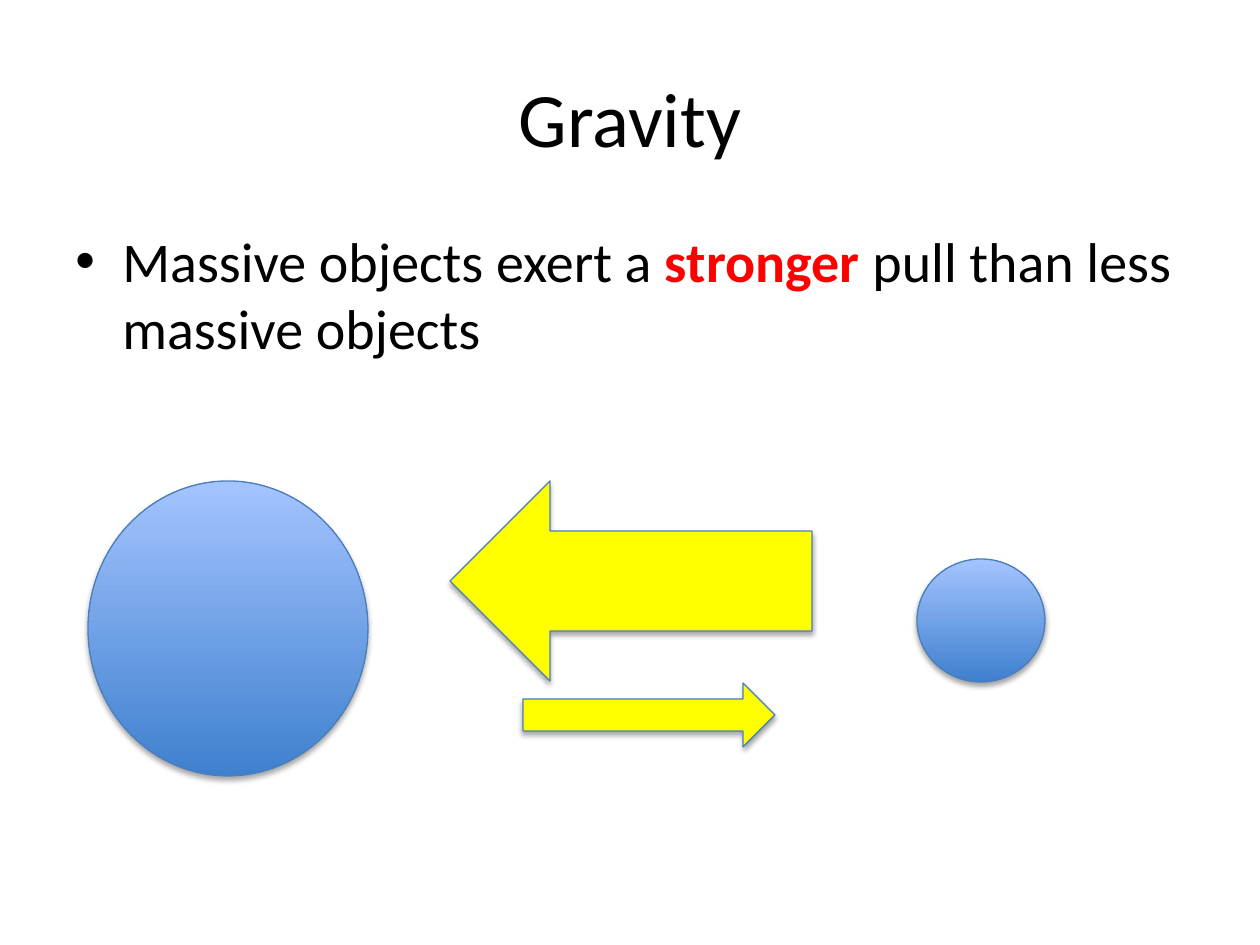
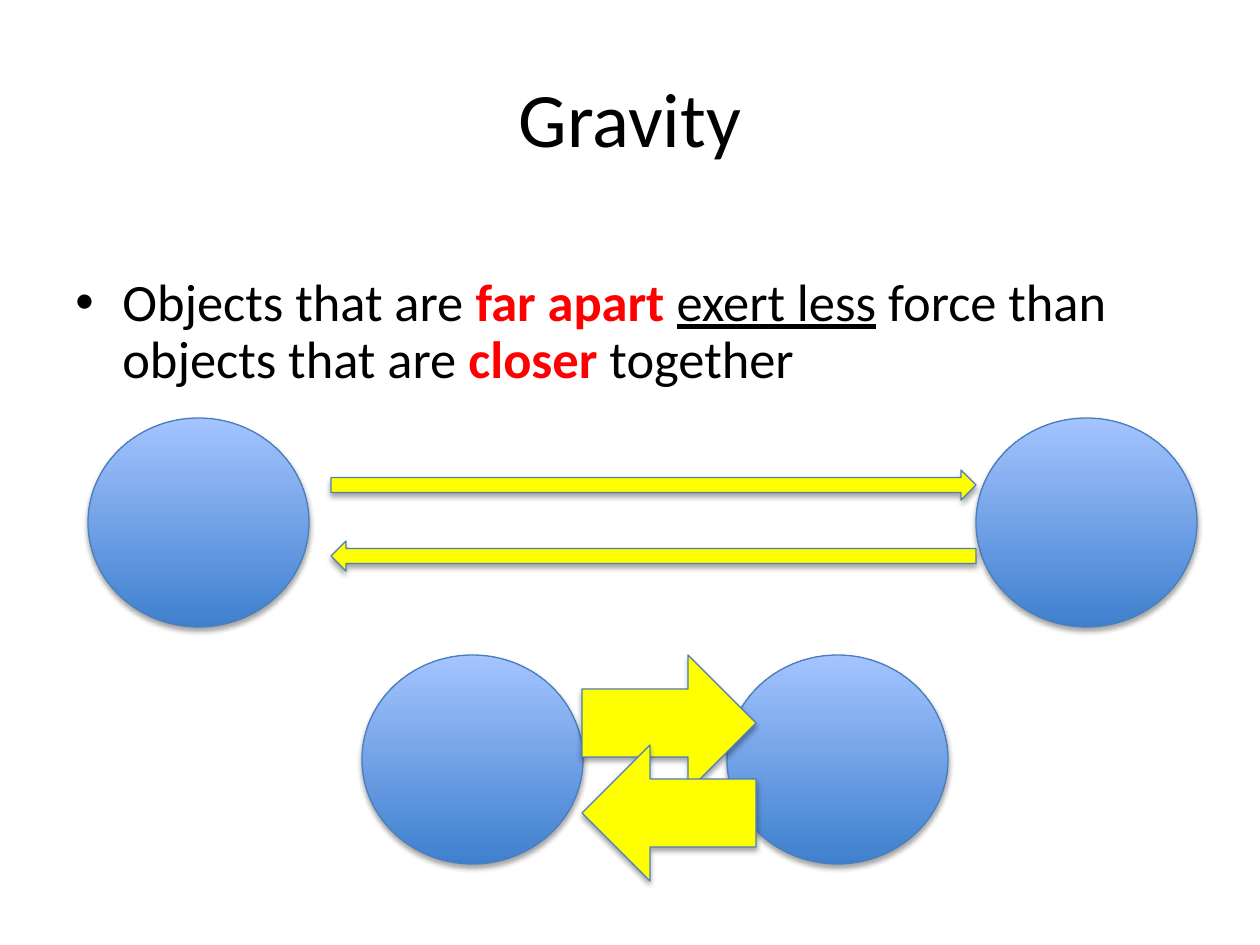
"""Build two slides on how mass and distance change the pull of gravity."""
from dataclasses import dataclass

from lxml.etree import SubElement
from pptx import Presentation
from pptx.dml.color import RGBColor
from pptx.enum.shapes import MSO_SHAPE
from pptx.enum.text import MSO_ANCHOR, PP_ALIGN
from pptx.oxml.ns import qn
from pptx.util import Emu, Pt


@dataclass(frozen=True)
class Theme:
    font: str = "Calibri"
    title_size: int = 44
    text: str = "000000"
    accent: str = "FF0000"
    ball_low: str = "3F80CE"
    ball_high: str = "A4C4FF"
    arrow: str = "FFFF00"
    outline: str = "4B7EBC"
    shadow: str = "000000"


THEME = Theme()
SCALE = 914400 / 126
WIDTH, HEIGHT = 1260, 945
MARGIN, INDENT = 63, 47
BALL, LEFT, RIGHT = MSO_SHAPE.OVAL, MSO_SHAPE.LEFT_ARROW, MSO_SHAPE.RIGHT_ARROW


def px(n):
    return Emu(round(n * SCALE))


def style_run(r, size, color, bold=False, underline=False):
    r.font.name, r.font.size = THEME.font, Pt(size)
    r.font.bold, r.font.underline = bold, underline
    r.font.color.rgb = RGBColor.from_string(color)


far_y, near_y = 418, 655
ball_w, ball_h = 221, 209
slides = [
    {
        "top": 220, "height": 194, "size": 32, "spacing": 1.0,
        "runs": [("Massive objects exert a ", ""), ("stronger ", "key"),
                 ("pull than less massive objects", "")],
        "shapes": [(BALL, 88, 481, 280, 295, 0), (LEFT, 450, 481, 362, 200, 0),
                   (RIGHT, 523, 683, 252, 64, 0), (BALL, 917, 559, 128, 123, 0)],
    },
    {
        "top": 270, "height": 127, "size": 30, "spacing": 0.9,
        "runs": [("Objects that are ", ""), ("far apart ", "key"),
                 ("exert less", "underline"), (" force than objects that are ", ""),
                 ("closer", "key"), (" together", "")],
        "shapes": [(BALL, x, y, ball_w, ball_h, 0)
                   for x, y in ((88, far_y), (976, far_y), (362, near_y), (727, near_y))]
                  + [(RIGHT, x, y + i * gap, w, h, i * 180)
                     for x, y, w, h, gap in ((331, 470, 645, 30, 71), (582, near_y, 174, 136, 90))
                     for i in range(2)],
    },
]

prs = Presentation()
prs.slide_width, prs.slide_height = px(WIDTH), px(HEIGHT)

for content in slides:
    s = prs.slides.add_slide(prs.slide_layouts[5])
    title = s.shapes.title
    title.left, title.top = px(MARGIN), px(38)
    title.width, title.height = px(WIDTH - 2 * MARGIN), px(157)
    tf = title.text_frame
    tf.text = "Gravity"
    tf.vertical_anchor = MSO_ANCHOR.MIDDLE
    p = tf.paragraphs[0]
    p.alignment = PP_ALIGN.CENTER
    style_run(p.runs[0], THEME.title_size, THEME.text)

    body = s.shapes.add_textbox(px(MARGIN), px(content["top"]),
                                px(WIDTH - 2 * MARGIN), px(content["height"]))
    tf = body.text_frame
    tf.word_wrap = True
    p = tf.paragraphs[0]
    p.line_spacing = content["spacing"]
    pPr = p._p.get_or_add_pPr()
    pPr.set("marL", str(px(INDENT)))
    pPr.set("indent", str(-px(INDENT)))
    SubElement(pPr, qn("a:buFont"), typeface="Arial")
    SubElement(pPr, qn("a:buChar"), char="•")
    for text, mark in content["runs"]:
        r = p.add_run()
        r.text = text
        style_run(r, content["size"], THEME.accent if mark == "key" else THEME.text,
                  bold=mark == "key", underline=mark == "underline")

    for kind, x, y, w, h, angle in content["shapes"]:
        sp = s.shapes.add_shape(kind, px(x), px(y), px(w), px(h))
        sp.rotation = angle
        if kind == BALL:
            sp.fill.gradient()
            sp.fill.gradient_angle = 90
            for stop, color in zip(sp.fill.gradient_stops, (THEME.ball_low, THEME.ball_high)):
                stop.color.rgb = RGBColor.from_string(color)
        else:
            sp.fill.solid()
            sp.fill.fore_color.rgb = RGBColor.from_string(THEME.arrow)
        sp.line.color.rgb = RGBColor.from_string(THEME.outline)
        sp.line.width = Pt(0.75)
        sp.shadow.inherit = False
        effects = sp._element.spPr.find(qn("a:effectLst"))
        shadow = SubElement(effects, qn("a:outerShdw"), blurRad=str(Pt(3.1)),
                            dist=str(Pt(1.8)), dir="5400000", rotWithShape="0")
        color = SubElement(shadow, qn("a:srgbClr"), val=THEME.shadow)
        SubElement(color, qn("a:alpha"), val="35000")

prs.save("out.pptx")
